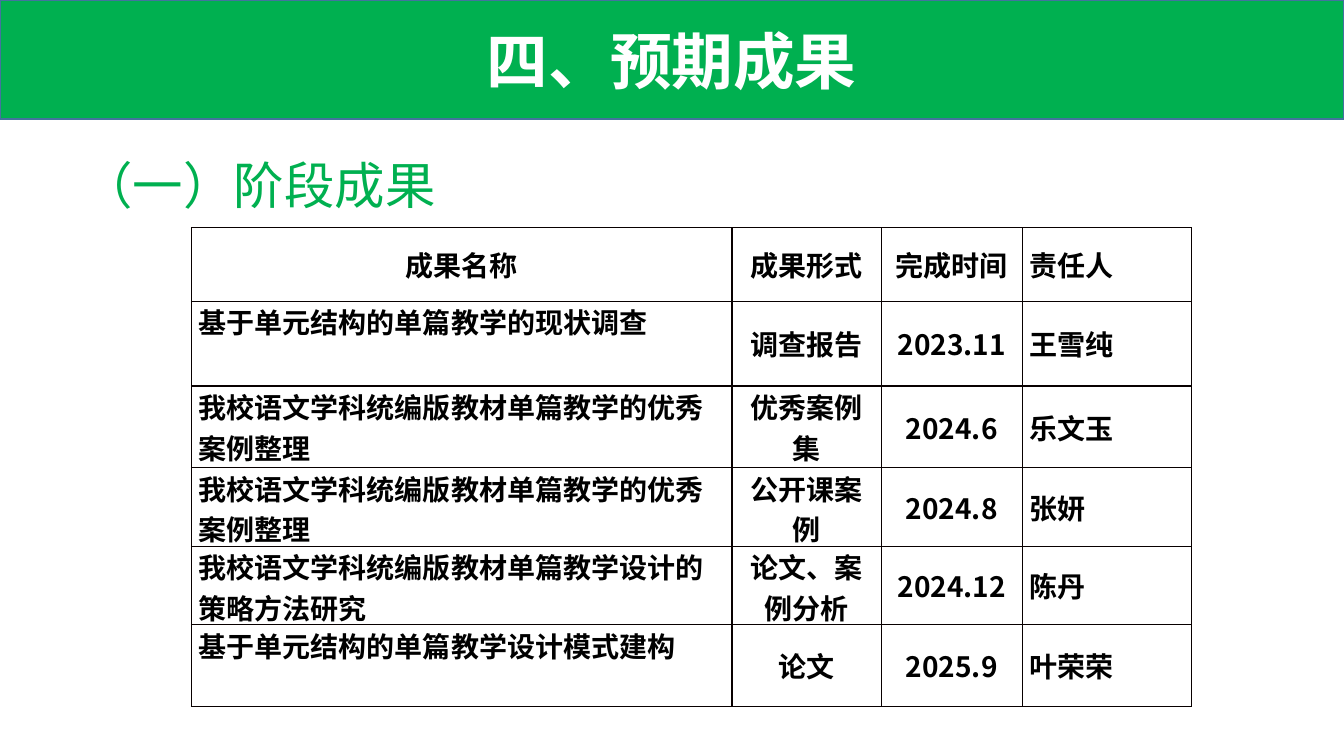
from lxml.etree import SubElement
from pptx import Presentation
from pptx.dml.color import RGBColor
from pptx.enum.shapes import MSO_SHAPE
from pptx.enum.text import MSO_ANCHOR, PP_ALIGN
from pptx.oxml.ns import qn
from pptx.util import Inches, Pt

GREEN, WHITE, BLACK = "00B050", "FFFFFF", "000000"
BANNER_EDGE, TABLE_BORDER = "43739E", "080000"
COLUMN_WIDTHS = [5.36, 1.48, 1.4, 1.68]
ROW_HEIGHTS = [0.73, 0.84, 0.81, 0.78, 0.78, 0.81]
RESULTS = [
    ["成果名称", "成果形式", "完成时间", "责任人"],
    ["基于单元结构的单篇教学的现状调查", "调查报告", "2023.11", "王雪纯"],
    ["我校语文学科统编版教材单篇教学的优秀案例整理", "优秀案例集", "2024.6", "乐文玉"],
    ["我校语文学科统编版教材单篇教学的优秀案例整理", "公开课案例", "2024.8", "张妍"],
    ["我校语文学科统编版教材单篇教学设计的策略方法研究", "论文、案例分析", "2024.12", "陈丹"],
    ["基于单元结构的单篇教学设计模式建构", "论文", "2025.9", "叶荣荣"],
]


def color(hex_code):
    return RGBColor.from_string(hex_code)


class SlideBuilder:
    """Draws styled elements on the current slide."""

    font_name = "Noto Sans CJK SC"

    def __init__(self, page):
        self.page = page

    def set_text(self, frame, text, size, hex_code, bold=False, align=PP_ALIGN.LEFT):
        frame.word_wrap = True
        para = frame.paragraphs[0]
        para.text = text
        para.alignment = align
        font = para.font
        font.name, font.size, font.bold = self.font_name, Pt(size), bold
        font.color.rgb = color(hex_code)
        defaults = para._p.pPr.find(qn("a:defRPr"))
        SubElement(defaults, qn("a:ea"), typeface=self.font_name)
        return para

    def banner(self, text, left, top, width, height):
        box = self.page.shapes.add_shape(
            MSO_SHAPE.RECTANGLE, Inches(left), Inches(top), Inches(width), Inches(height))
        box.shadow.inherit = False
        box.fill.solid()
        box.fill.fore_color.rgb = color(GREEN)
        box.line.color.rgb = color(BANNER_EDGE)
        box.line.width = Pt(1)
        box.text_frame.vertical_anchor = MSO_ANCHOR.MIDDLE
        self.set_text(box.text_frame, text, 44, WHITE, True, PP_ALIGN.CENTER)

    def heading(self, text, left, top, width, height):
        box = self.page.shapes.add_textbox(
            Inches(left), Inches(top), Inches(width), Inches(height))
        self.set_text(box.text_frame, text, 36, GREEN).line_spacing = 1.5

    def border(self, cell):
        properties = cell._tc.get_or_add_tcPr()
        for position, side in enumerate(("lnL", "lnR", "lnT", "lnB")):
            line = SubElement(properties, qn(f"a:{side}"), w=str(Pt(1)))
            fill = SubElement(line, qn("a:solidFill"))
            SubElement(fill, qn("a:srgbClr"), val=TABLE_BORDER)
            properties.insert(position, line)

    def table(self, rows, left, top, widths, heights):
        table = self.page.shapes.add_table(
            len(rows), len(widths), Inches(left), Inches(top),
            Inches(sum(widths)), Inches(sum(heights))).table
        table.first_row = table.horz_banding = False
        for column, width in zip(table.columns, widths):
            column.width = Inches(width)
        for row, height in zip(table.rows, heights):
            row.height = Inches(height)
        for row_index, values in enumerate(rows):
            for column_index, text in enumerate(values):
                cell = table.cell(row_index, column_index)
                is_result_name = column_index == 0 and row_index > 0
                is_person = column_index == len(widths) - 1
                left_aligned = is_person or is_result_name
                cell.margin_left = cell.margin_right = Inches(0.07)
                cell.margin_top = cell.margin_bottom = 0
                cell.vertical_anchor = MSO_ANCHOR.TOP if is_result_name else MSO_ANCHOR.MIDDLE
                cell.fill.background()
                self.border(cell)
                self.set_text(cell.text_frame, text, 20, BLACK, True,
                              PP_ALIGN.LEFT if left_aligned else PP_ALIGN.CENTER)


def main():
    deck = Presentation()
    deck.slide_width, deck.slide_height = Inches(13.33), Inches(7.5)
    builder = SlideBuilder(deck.slides.add_slide(deck.slide_layouts[6]))
    builder.banner("四、预期成果", 0, 0, 13.33, 1.18)
    builder.heading("（一）阶段成果", 0.72, 1.18, 11.89, 1.48)
    builder.table(RESULTS, 1.9, 2.26, COLUMN_WIDTHS, ROW_HEIGHTS)
    deck.save("out.pptx")


if __name__ == "__main__":
    main()
